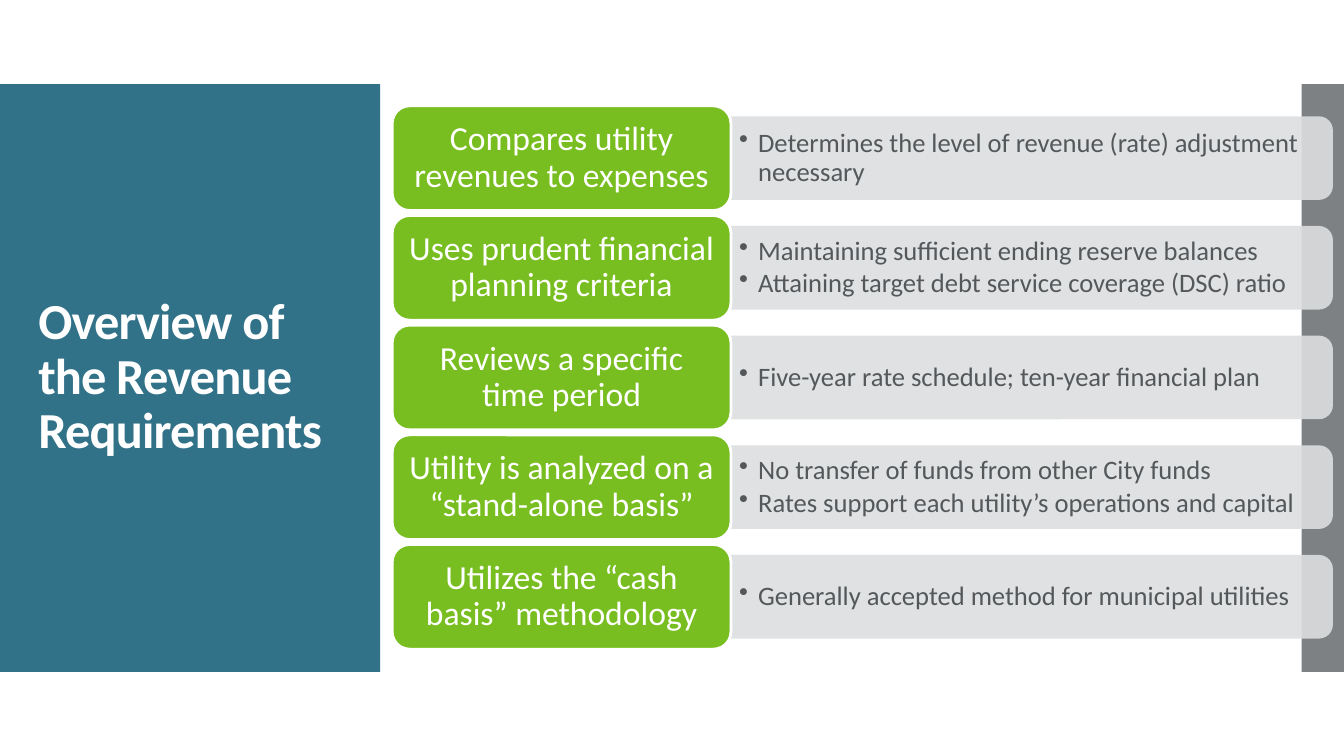
import pptx
import pptx.dml.color
import pptx.enum.shapes
import pptx.enum.text
import pptx.oxml.ns
import pptx.util
from lxml import etree

SLIDE_W, SLIDE_H = 13.33, 7.5
BAND_TOP, BAND_H = SLIDE_H / 9, SLIDE_H * 7 / 9
TEAL, GREEN, SLATE, SILVER, WHITE = "327288", "78BE20", "54585A", "DCDEDF", "FFFFFF"
FONT = "Calibri"
SHAPE = pptx.enum.shapes.MSO_SHAPE
ALIGN = pptx.enum.text.PP_ALIGN

TITLE = "Overview of the Revenue Requirements"
REQUIREMENTS = [
    ("Compares utility revenues to expenses",
     ["Determines the level of revenue (rate) adjustment necessary"]),
    ("Uses prudent financial planning criteria",
     ["Maintaining sufficient ending reserve balances",
      "Attaining target debt service coverage (DSC) ratio"]),
    ("Reviews a specific time period",
     ["Five-year rate schedule; ten-year financial plan"]),
    ("Utility is analyzed on a “stand-alone basis”",
     ["No transfer of funds from other City funds",
      "Rates support each utility’s operations and capital"]),
    ("Utilizes the “cash basis” methodology",
     ["Generally accepted method for municipal utilities"]),
]


def inches(*lengths):
    return [pptx.util.Inches(length) for length in lengths]


def rgb(color):
    return pptx.dml.color.RGBColor.from_string(color)


def add_block(slide, preset, box, color, opacity=100, outline=None):
    block = slide.shapes.add_shape(preset, *inches(*box))
    block.shadow.inherit = False
    block.fill.solid()
    block.fill.fore_color.rgb = rgb(color)
    if opacity < 100:
        tint = block.element.spPr.find(".//" + pptx.oxml.ns.qn("a:srgbClr"))
        etree.SubElement(tint, pptx.oxml.ns.qn("a:alpha"), val=str(opacity * 1000))
    if outline:
        block.line.color.rgb = rgb(outline)
        block.line.width = pptx.util.Pt(2)
    else:
        block.line.fill.background()
    return block


def write(shape, lines, size, color, align=ALIGN.LEFT, bold=False, insets=(0.1, 0.05), after=0):
    """Fill the shape with one paragraph per line and return the paragraphs."""
    frame = shape.text_frame
    side, end = inches(*insets)
    frame_format = {
        "text": "\n".join(lines), "word_wrap": True,
        "auto_size": pptx.enum.text.MSO_AUTO_SIZE.NONE,
        "vertical_anchor": pptx.enum.text.MSO_ANCHOR.MIDDLE,
        "margin_left": side, "margin_right": side, "margin_top": end, "margin_bottom": end,
    }
    for name, value in frame_format.items():
        setattr(frame, name, value)
    for paragraph in frame.paragraphs:
        paragraph.alignment = align
        paragraph.line_spacing = 0.9
        paragraph.space_before = pptx.util.Pt(0)
        paragraph.space_after = pptx.util.Pt(after)
        font = paragraph.runs[0].font
        for name, value in {"name": FONT, "size": pptx.util.Pt(size), "bold": bold}.items():
            setattr(font, name, value)
        font.color.rgb = rgb(color)
    return frame.paragraphs


def add_title_panel(slide, left, top, width, height):
    add_block(slide, SHAPE.RECTANGLE, (left, top, width, height), TEAL)
    title = slide.shapes.title
    places = inches(left + 0.28, top + 0.4, width - 0.55, height - 0.8)
    for name, value in zip(("left", "top", "width", "height"), places):
        setattr(title, name, value)
    heading = write(title, [TITLE], 36, WHITE, bold=True)[0]
    heading.runs[0].font._element.set("spc", "-60")
    title.element.getparent().append(title.element)  # bring in front of the panel


def add_details(slide, details, left, top, width, height):
    """Grey bar rounded on its right side, with bulleted text over it."""
    # The preset is rounded on top, so it is laid out upright and turned a quarter.
    upright = (left + (width - height) / 2, top + (height - width) / 2, height, width)
    bar = add_block(slide, SHAPE.ROUND_2_SAME_RECTANGLE, upright, SILVER, opacity=90)
    bar.rotation = 90
    notes = slide.shapes.add_textbox(*inches(left, top + 0.04, width - 0.04, height - 0.08))
    for paragraph in write(notes, details, 19, SLATE, insets=(0.08, 0.04), after=2.85):
        properties = paragraph._p.get_or_add_pPr()
        indent = pptx.util.Inches(0.19)
        properties.set("marL", str(indent))
        properties.set("indent", str(-indent))
        etree.SubElement(properties, pptx.oxml.ns.qn("a:buChar"), char="•")


def add_requirements(slide, left, top, width, height):
    pitch = height / len(REQUIREMENTS)
    label_w, label_h, bar_h = 3.36, pitch - 0.05, 0.83
    for row, (label, details) in enumerate(REQUIREMENTS):
        row_top = top + row * pitch
        add_details(slide, details, left + label_w, row_top + (label_h - bar_h) / 2,
                    width - label_w, bar_h)
        tile = add_block(slide, SHAPE.ROUNDED_RECTANGLE,
                         (left, row_top, label_w, label_h), GREEN, outline=WHITE)
        write(tile, [label], 24, WHITE, align=ALIGN.CENTER, insets=(0.08, 0.05))


def main():
    deck = pptx.Presentation()
    deck.slide_width, deck.slide_height = inches(SLIDE_W, SLIDE_H)
    slide = deck.slides.add_slide(deck.slide_layouts[5])
    edge_w = 0.42
    add_title_panel(slide, 0, BAND_TOP, 3.77, BAND_H)
    add_block(slide, SHAPE.RECTANGLE, (SLIDE_W - edge_w, BAND_TOP, edge_w, BAND_H),
              SLATE, opacity=75)
    add_requirements(slide, 3.89, 1.05, 9.33, 5.44)
    deck.save("out.pptx")


if __name__ == "__main__":
    main()
